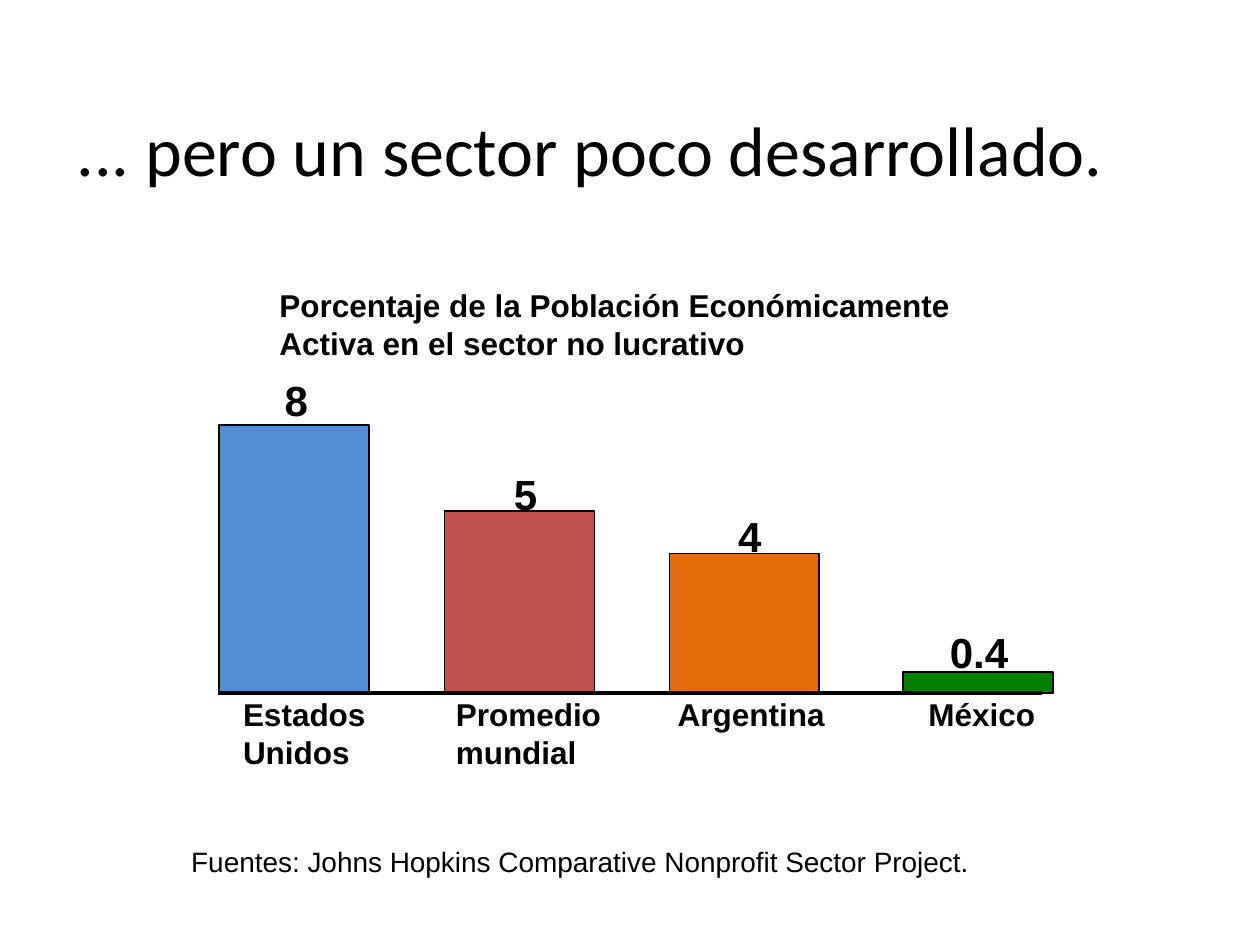
from dataclasses import dataclass

from lxml.etree import SubElement
from pptx import Presentation
from pptx.dml.color import RGBColor
from pptx.enum.shapes import MSO_CONNECTOR, MSO_SHAPE
from pptx.enum.text import MSO_ANCHOR
from pptx.oxml.ns import qn
from pptx.util import Pt

BLACK = RGBColor(0x00, 0x00, 0x00)
BLUE = RGBColor(0x55, 0x8E, 0xD5)
RED = RGBColor(0xC0, 0x50, 0x4D)
ORANGE = RGBColor(0xE4, 0x6C, 0x0A)
GREEN = RGBColor(0x00, 0x80, 0x00)

BASELINE = 396
BAR_WIDTH = 85.7
VALUE_HEIGHT = 36.7
LABEL_TOP = 393.8


@dataclass
class Bar:
    """One country: bar, value box and label box, in points."""
    label: str
    value: str
    color: RGBColor
    left: float
    height: float
    value_left: float
    value_top: float
    value_width: float
    label_left: float
    label_width: float
    label_height: float


BARS = [
    Bar("Estados Unidos", "8", BLUE, 125.3, 153.2, 155.5, 210.2, 36.7, 131.8, 91.4, 51),
    Bar("Promedio mundial", "5", RED, 254, 104, 286.6, 264.2, 36.7, 253.4, 104.4, 51),
    Bar("Argentina", "4", ORANGE, 382.5, 79.7, 414.7, 288, 36.7, 380.2, 100.8, 29.5),
    Bar("México", "0.4", GREEN, 516, 12, 535.7, 354.2, 51.8, 523.4, 92.2, 29.5),
]


class SlideBuilder:
    def __init__(self, slide, font="Arial", color=BLACK):
        self.slide = slide
        self.font = font
        self.color = color

    def rect(self, left, top, width, height, fill):
        sp = self.slide.shapes.add_shape(
            MSO_SHAPE.RECTANGLE, Pt(left), Pt(top), Pt(width), Pt(height))
        sp.shadow.inherit = False
        sp.fill.solid()
        sp.fill.fore_color.rgb = fill
        sp.line.color.rgb = self.color
        sp.line.width = Pt(1)

    def line(self, x1, y1, x2, y2, width):
        cxn = self.slide.shapes.add_connector(
            MSO_CONNECTOR.STRAIGHT, Pt(x1), Pt(y1), Pt(x2), Pt(y2))
        cxn.line.color.rgb = self.color
        cxn.line.width = Pt(width)
        SubElement(cxn._element.spPr, qn("a:effectLst"))

    def text(self, left, top, width, height, text, size,
             bold=False, font=None, anchor=MSO_ANCHOR.TOP):
        box = self.slide.shapes.add_textbox(Pt(left), Pt(top), Pt(width), Pt(height))
        tf = box.text_frame
        tf.word_wrap = True
        tf.vertical_anchor = anchor
        r = tf.paragraphs[0].add_run()
        r.text = text
        r.font.name = font or self.font
        r.font.size = Pt(size)
        r.font.bold = bold
        r.font.color.rgb = self.color


def main():
    prs = Presentation()
    prs.slide_width, prs.slide_height = Pt(720), Pt(540)
    s = SlideBuilder(prs.slides.add_slide(prs.slide_layouts[6]))

    for bar in BARS:
        s.rect(bar.left, BASELINE - bar.height, BAR_WIDTH, bar.height, bar.color)
    s.line(124.6, BASELINE, 595.4, BASELINE, 2.25)

    s.text(152.6, 159.8, 452.9, 51,
           "Porcentaje de la Población Económicamente Activa en el sector no lucrativo",
           18, bold=True)
    for bar in BARS:
        s.text(bar.value_left, bar.value_top, bar.value_width, VALUE_HEIGHT,
               bar.value, 24, bold=True)
        s.text(bar.label_left, LABEL_TOP, bar.label_width, bar.label_height,
               bar.label, 18, bold=True)

    s.text(102.2, 468, 581.8, 48.2,
           "Fuentes: Johns Hopkins Comparative Nonprofit Sector Project.",
           16, anchor=MSO_ANCHOR.MIDDLE)
    s.text(36.7, 49, 661, 72, "... pero un sector poco desarrollado.",
           40, font="Calibri", anchor=MSO_ANCHOR.MIDDLE)

    prs.save("out.pptx")


if __name__ == "__main__":
    main()
